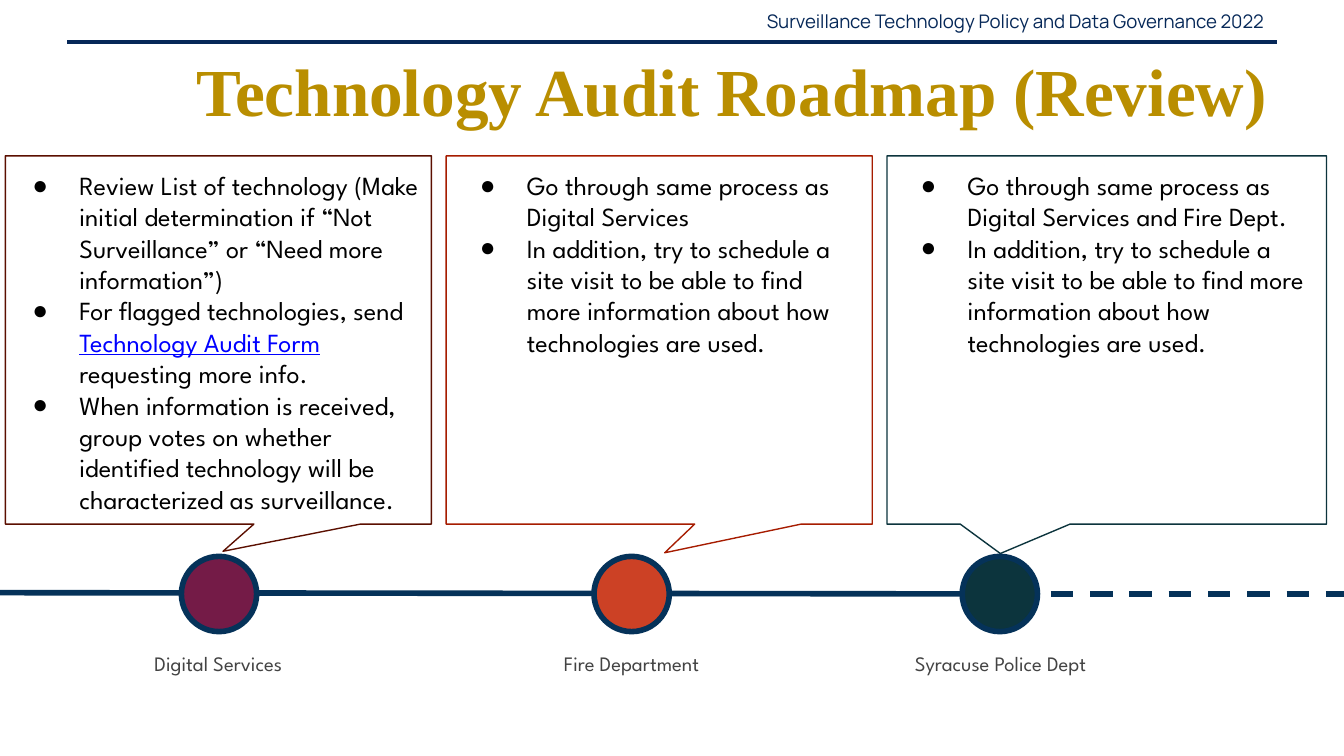
import pptx
import pptx.util
import pptx.dml.color
import pptx.enum.dml
import pptx.enum.shapes
import pptx.enum.text
import pptx.oxml
import pptx.oxml.ns

Inches, Pt = pptx.util.Inches, pptx.util.Pt
SHAPE = pptx.enum.shapes.MSO_SHAPE
ALIGN = pptx.enum.text.PP_ALIGN
ANCHOR = pptx.enum.text.MSO_ANCHOR

THEME = {
    "navy": "062858", "track": "053259", "gold": "B98E00", "black": "000000",
    "grey": "434343", "link": "0000FF",
    "title_font": "Times New Roman", "header_font": "Manrope", "body_font": "League Spartan",
    "title": 36, "body": 14, "label": 11, "header": 10,
}

HEADER = "Surveillance Technology Policy and Data Governance 2022"
TITLE = "Technology Audit Roadmap (Review)"
LINK = "Technology Audit Form "
VISIT = ("In addition, try to schedule a site visit to be able to find more "
         "information about how technologies are used.")

STAGES = [
    {"label": "Digital Services", "label_box": (0.98, 1.29), "dot_x": 1.35,
     "fill": "741B47", "border": "5B0F00", "callout": (0.04, 3.17),
     "tip": (0.011, 0.574), "text_box": (-0.01, 3.33, 3.17),
     "bullets": [
         ["Review List of technology (Make initial determination if “Not Surveillance” "
          "or “Need more information”)"],
         ["For flagged technologies, send ", LINK, "requesting more info."],
         ["When information is received, group votes on whether identified technology "
          "will be characterized as surveillance."]]},
    {"label": "Fire Department", "label_box": (3.96, 1.48), "dot_x": 4.42,
     "fill": "CC4125", "border": "A61C00", "callout": (3.32, 3.17),
     "tip": (0.013, 0.578), "text_box": (3.32, 3.17, 1.99),
     "bullets": [["Go through same process as Digital Services"], [VISIT]]},
    {"label": "Syracuse Police Dept", "label_box": (6.59, 1.71), "dot_x": 7.16,
     "fill": "0C343D", "border": "0C343D", "callout": (6.6, 3.27),
     "tip": (-0.242, 0.58), "text_box": (6.6, 3.27, 2.23),
     "bullets": [["Go through same process as Digital Services and Fire Dept."], [VISIT]]},
]

SLIDE_W = 10
CALLOUT_TOP, CALLOUT_H = 1.16, 2.74
DOT_TOP, DOT = 4.14, 0.56
LABEL_TOP, LABEL_H = 4.74, 0.39


def rgb(value):
    return pptx.dml.color.RGBColor.from_string(value)


def place(sp, x, y, w, h):
    sp.left, sp.top, sp.width, sp.height = (Inches(v) for v in (x, y, w, h))


def style(r, font, size, color, bold=False):
    r.font.name, r.font.size, r.font.bold = font, Pt(size), bold
    r.font.color.rgb = rgb(color)


def frame(sp, anchor, inset):
    tf = sp.text_frame
    tf.word_wrap = True
    tf.auto_size = pptx.enum.text.MSO_AUTO_SIZE.NONE
    tf.vertical_anchor = anchor
    tf.margin_left = tf.margin_right = Inches(0.1)
    tf.margin_top = tf.margin_bottom = Inches(inset)
    return tf


def set_line(sp, text, align, anchor, inset, *look, **kw):
    tf = frame(sp, anchor, inset)
    tf.text = text
    p = tf.paragraphs[0]
    p.alignment = align
    style(p.runs[0], *look, **kw)


def add_shape(s, kind, box, line, width, fill=None):
    sp = s.shapes.add_shape(kind, *(Inches(v) for v in box))
    sp.shadow.inherit = False
    if fill:
        sp.fill.solid()
        sp.fill.fore_color.rgb = rgb(fill)
    else:
        sp.fill.background()
    sp.line.color.rgb = rgb(line)
    sp.line.width = Pt(width)
    return sp


def add_line(s, x1, y1, x2, y2, color, width):
    c = s.shapes.add_connector(pptx.enum.shapes.MSO_CONNECTOR.STRAIGHT,
                               *(Inches(v) for v in (x1, y1, x2, y2)))
    c.line.color.rgb = rgb(color)
    c.line.width = Pt(width)
    c.element.spPr.append(pptx.oxml.parse_xml(
        "<a:effectLst %s/>" % pptx.oxml.ns.nsdecls("a")))
    return c


def add_bullet(p):
    p.space_before = p.space_after = Pt(0)
    p.alignment = ALIGN.LEFT
    pPr = p._p.get_or_add_pPr()
    pPr.set("marL", str(Inches(0.5)))
    pPr.set("indent", str(Inches(-0.35)))
    ns = pptx.oxml.ns.nsdecls("a")
    for xml in ('<a:buClr %s><a:srgbClr val="{}"/></a:buClr>'.format(THEME["black"]),
                '<a:buFont %s typeface="Arial"/>',
                '<a:buChar %s char="●"/>'):
        pPr.append(pptx.oxml.parse_xml(xml % ns))


def fill_list(sp, bullets):
    tf = frame(sp, ANCHOR.TOP, 0.1)
    for i, parts in enumerate(bullets):
        p = tf.paragraphs[0] if i == 0 else tf.add_paragraph()
        add_bullet(p)
        for part in parts:
            r = p.add_run()
            r.text = part
            color = THEME["link"] if part == LINK else THEME["black"]
            style(r, THEME["body_font"], THEME["body"], color)
            if part == LINK:
                r.font.underline = True


def main():
    prs = pptx.Presentation()
    prs.slide_width, prs.slide_height = Inches(SLIDE_W), Inches(SLIDE_W * 9 / 16)
    s = prs.slides.add_slide(prs.slide_layouts.get_by_name("Comparison"))
    title, *bodies = s.placeholders

    add_line(s, 0.5, 0.31, 9.5, 0.31, THEME["navy"], 2.25)
    header = s.shapes.add_textbox(Inches(5.21), Inches(0.01), Inches(4.29), Inches(0.3))
    set_line(header, HEADER, ALIGN.RIGHT, ANCHOR.MIDDLE, 0.05,
             THEME["header_font"], THEME["header"], THEME["navy"])
    place(title, 0.28, 0.35, 9.25, 0.64)
    set_line(title, TITLE, ALIGN.RIGHT, ANCHOR.MIDDLE, 0.05,
             THEME["title_font"], THEME["title"], THEME["gold"], bold=True)

    dashed = add_line(s, 7.82, 4.42, 10.01, 4.42, THEME["track"], 3)
    dashed.line.dash_style = pptx.enum.dml.MSO_LINE.DASH
    add_line(s, -0.01, 4.41, 7.72, 4.42, THEME["track"], 3)

    for stage, body in zip(STAGES, bodies):
        x, w = stage["callout"]
        callout = add_shape(s, SHAPE.RECTANGULAR_CALLOUT, (x, CALLOUT_TOP, w, CALLOUT_H),
                            stage["border"], 0.75)
        callout.adjustments[0], callout.adjustments[1] = stage["tip"]
        add_shape(s, SHAPE.OVAL, (stage["dot_x"], DOT_TOP, DOT, DOT),
                  THEME["track"], 3, stage["fill"])

        x, w = stage["label_box"]
        label = s.shapes.add_textbox(Inches(x), Inches(LABEL_TOP), Inches(w), Inches(LABEL_H))
        set_line(label, stage["label"], ALIGN.CENTER, ANCHOR.TOP, 0.1,
                 THEME["body_font"], THEME["label"], THEME["grey"])

        x, w, h = stage["text_box"]
        place(body, x, CALLOUT_TOP, w, h)
        fill_list(body, stage["bullets"])

    for sp in bodies[len(STAGES):]:
        sp.element.getparent().remove(sp.element)

    prs.save("out.pptx")


if __name__ == "__main__":
    main()
